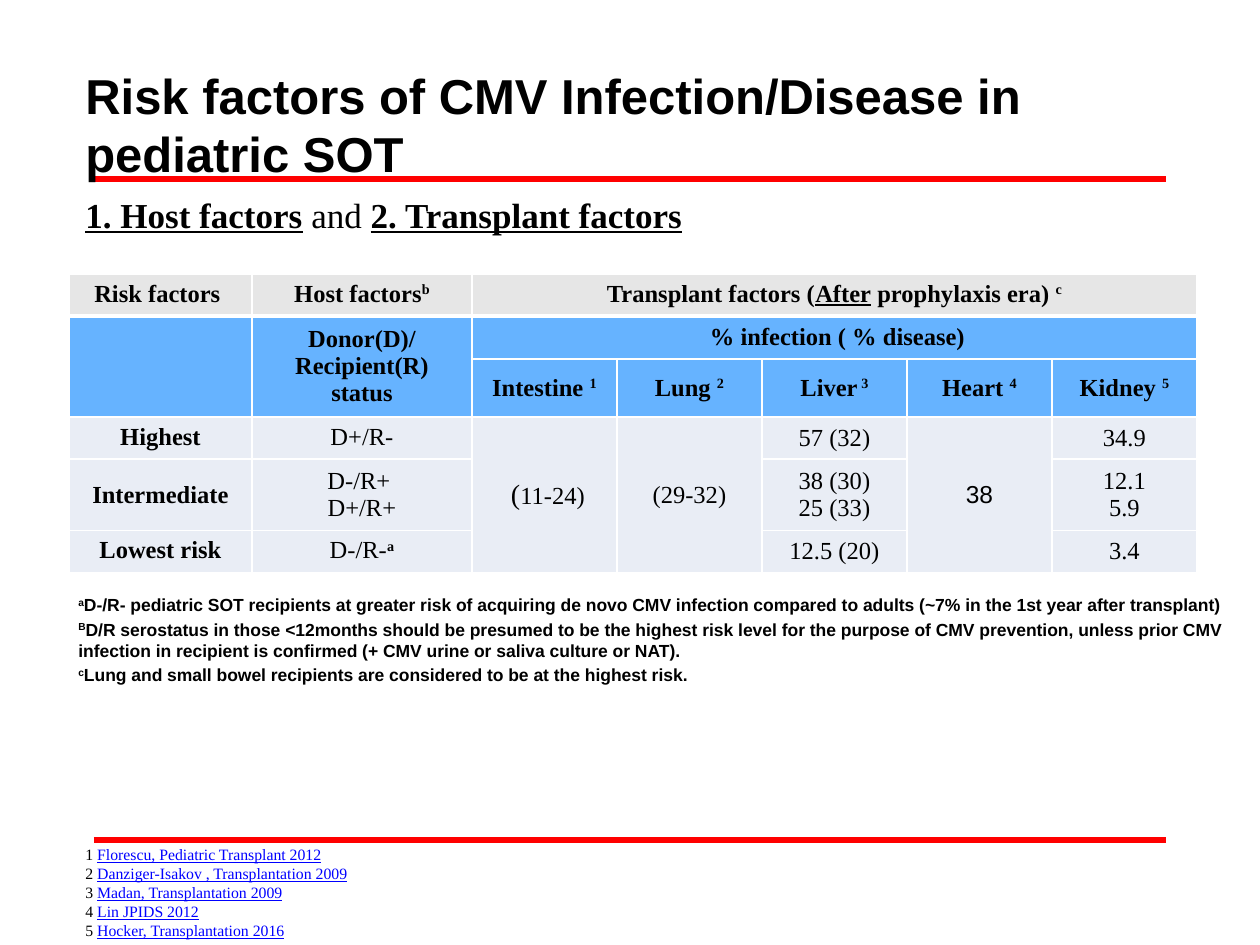
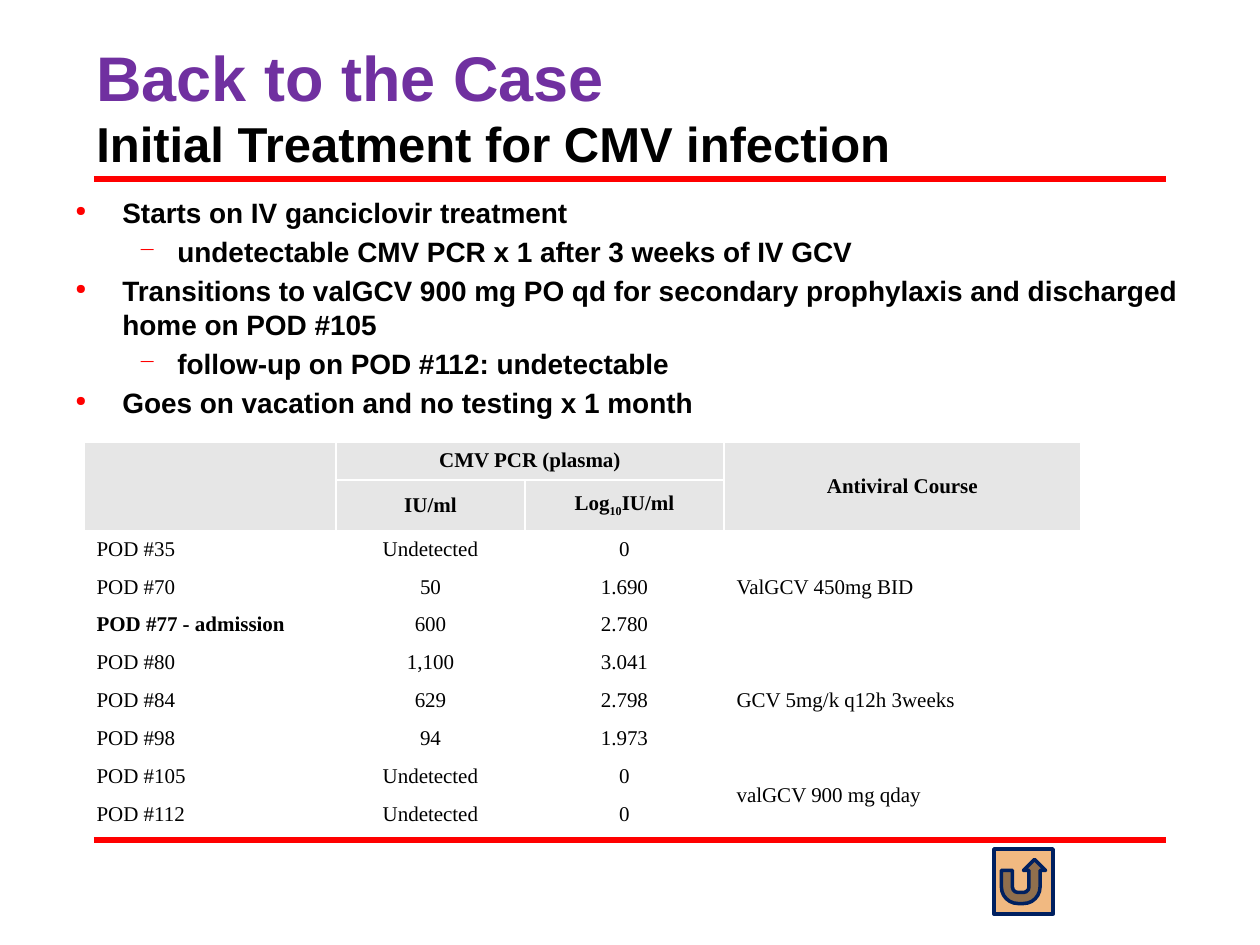
from dataclasses import dataclass

from lxml.etree import SubElement
from pptx import Presentation
from pptx.dml.color import RGBColor
from pptx.enum.shapes import MSO_CONNECTOR, MSO_SHAPE
from pptx.enum.text import MSO_ANCHOR as Anchor, PP_ALIGN as Align
from pptx.oxml.ns import qn
from pptx.util import Emu, Pt


@dataclass(frozen=True)
class Theme:
    sans: str = "Arial"
    serif: str = "Times New Roman"
    black: str = "000000"
    white: str = "FFFFFF"
    red: str = "FF0000"
    purple: str = "7030A0"
    link: str = "0000FF"
    header_grey: str = "E6E6E6"
    header_blue: str = "66B3FF"
    body_blue: str = "E9EDF5"
    button: str = "F1B981"
    navy: str = "002060"
    big_title: int = 36
    title: int = 28
    heading: int = 20
    bullet: int = 16
    risk_table: int = 14
    course_table: int = 12
    footnote: int = 10
    reference: int = 9


theme = Theme()
PX = 914400 / 126
SUPER = {"baseline": 30000}
SUB = {"baseline": -25000}


def write(frame, paragraphs, align=Align.LEFT, anchor=Anchor.TOP, space_before=0, **base):
    """Fill a frame; a paragraph is a string or a list of strings and (string, format) pairs."""
    frame.word_wrap = True
    frame.vertical_anchor = anchor
    for index, runs in enumerate(paragraphs):
        paragraph = frame.paragraphs[0] if index == 0 else frame.add_paragraph()
        paragraph.alignment = align
        paragraph.space_before = Pt(space_before)
        for part in [runs] if isinstance(runs, str) else runs:
            text, changes = (part, {}) if isinstance(part, str) else part
            look = {"font": theme.sans, "color": theme.black, "bold": False} | base | changes
            run = paragraph.add_run()
            run.text = text
            run.font.name = look["font"]
            run.font.size = Pt(look["size"])
            run.font.bold = look["bold"]
            run.font.underline = look.get("underline", False)
            run.font.color.rgb = RGBColor.from_string(look["color"])
            if "baseline" in look:
                run.font._element.set("baseline", str(look["baseline"]))


def build_table(slide, left, top, widths, heights, spans, thick_row=None):
    """Add an unfilled table with white borders; spans maps a cell to its last cell."""
    frame = slide.shapes.add_table(
        len(heights), len(widths), Emu(round(left * PX)), Emu(round(top * PX)),
        Emu(round(sum(widths) * PX)), Emu(round(sum(heights) * PX)))
    table = frame.table
    table.first_row = table.horz_banding = False
    for column, width in zip(table.columns, widths):
        column.width = Emu(round(width * PX))
    for row_index, (row, height) in enumerate(zip(table.rows, heights)):
        row.height = Emu(round(height * PX))
        for cell in row.cells:
            properties = cell._tc.get_or_add_tcPr()
            for side in "LRTB":
                thick = ((side == "B" and row_index == thick_row)
                         or (side == "T" and row_index - 1 == thick_row))
                width = Pt(3 if thick and thick_row is not None else 1)
                border = SubElement(properties, qn(f"a:ln{side}"), w=str(width))
                fill = SubElement(border, qn("a:solidFill"))
                SubElement(fill, qn("a:srgbClr"), val=theme.white)
            cell.fill.background()
    for first, last in spans.items():
        table.cell(*first).merge(table.cell(*last))
    return table


presentation = Presentation()
presentation.slide_width = Emu(round(1260 * PX))
presentation.slide_height = Emu(round(945 * PX))
blank = presentation.slide_layouts[6]
risk_slide, case_slide = (presentation.slides.add_slide(blank) for _ in range(2))

# Red rules shared by both slides
for slide in (risk_slide, case_slide):
    for y in (179, 840):
        rule = slide.shapes.add_connector(
            MSO_CONNECTOR.STRAIGHT, *(Emu(round(v * PX)) for v in (94, y, 1166, y)))
        rule.line.color.rgb = RGBColor.from_string(theme.red)
        rule.line.width = Pt(3)
        SubElement(rule._element.spPr, qn("a:effectLst"))

# Text blocks
title_format = dict(size=theme.title, bold=True, anchor=Anchor.BOTTOM)
underlined = {"bold": True, "underline": True}
references = ["Florescu, Pediatric Transplant 2012", "Danziger-Isakov , Transplantation 2009",
              "Madan, Transplantation 2009", "Lin JPIDS 2012", "Hocker, Transplantation 2016"]
footnotes = [
    ("a", "D-/R- pediatric SOT recipients at greater risk of acquiring de novo CMV infection "
          "compared to adults (~7% in the 1st year after transplant)"),
    ("B", "D/R serostatus in those <12months should be presumed to be the highest risk level "
          "for the purpose of CMV prevention, unless prior CMV infection in recipient is "
          "confirmed (+ CMV urine or saliva culture or NAT)."),
    ("c", "Lung and small bowel recipients are considered to be at the highest risk."),
]
treatment_steps = [
    (0, "Starts on IV ganciclovir treatment"),
    (1, "undetectable CMV PCR x 1 after 3 weeks of IV GCV"),
    (0, "Transitions to valGCV 900 mg PO qd for secondary prophylaxis and discharged "
        "home on POD #105"),
    (1, "follow-up on POD #112: undetectable"),
    (0, "Goes on vacation and no testing x 1 month"),
]
text_blocks = [
    (risk_slide, (73, 32, 1134, 157),
     ["Risk factors of CMV Infection/Disease in pediatric SOT"], title_format),
    (risk_slide, (73, 187, 640, 55),
     [[("1. Host factors", underlined), " and ", ("2. Transplant factors", underlined)]],
     dict(size=theme.heading, font=theme.serif)),
    (risk_slide, (66, 588, 1176, 210),
     [[(mark, SUPER), note] for mark, note in footnotes],
     dict(size=theme.footnote, bold=True, space_before=2)),
    (risk_slide, (73, 839, 336, 108),
     [[f"{number} ", (source, {"color": theme.link, "underline": True})]
      for number, source in enumerate(references, 1)],
     dict(size=theme.reference, font=theme.serif)),
    (case_slide, (84, 21, 1134, 158),
     [[("Back to the Case", {"size": theme.big_title, "color": theme.purple})],
      "Initial Treatment for CMV infection"], title_format),
    (case_slide, (63, 189, 1155, 340), [step for _, step in treatment_steps],
     dict(size=theme.bullet, bold=True, space_before=3.2)),
]
for slide, box, paragraphs, text_format in text_blocks:
    text_box = slide.shapes.add_textbox(*(Emu(round(v * PX)) for v in box))
    write(text_box.text_frame, paragraphs, **text_format)

# Bullets of the treatment steps, in the last text box
bullet_levels = [(47, -47, "●", 50), (102, -39, "─", 80)]
for (level, _), paragraph in zip(treatment_steps, text_box.text_frame.paragraphs):
    margin, indent, symbol, percent = bullet_levels[level]
    paragraph.level = level
    properties = paragraph._p.get_or_add_pPr()
    properties.set("marL", str(round(margin * PX)))
    properties.set("indent", str(round(indent * PX)))
    color = SubElement(properties, qn("a:buClr"))
    SubElement(color, qn("a:srgbClr"), val=theme.red)
    SubElement(properties, qn("a:buSzPct"), val=str(percent * 1000))
    SubElement(properties, qn("a:buChar"), char=symbol)

# Risk factor table
organs = [("Intestine ", "1"), ("Lung ", "2"), ("Liver", " 3"), ("Heart ", "4"), ("Kidney ", "5")]
risk_cells = {
    (0, 0): ["Risk factors "],
    (0, 1): [["Host factors", ("b", SUPER)]],
    (0, 2): [["Transplant factors (", ("After", {"underline": True}), " prophylaxis era) ",
              ("c", SUPER)]],
    (1, 1): ["Donor(D)/", "Recipient(R) status"],
    (1, 2): [" % infection ( % disease)"],
    (3, 0): ["Highest"],
    (3, 1): ["D+/R-"],
    (3, 2): [[(" (", {"size": 16}), "11-24)"]],
    (3, 3): ["(29-32)"],
    (3, 4): ["57 (32)"],
    (3, 5): [[("38", {"font": theme.sans})]],
    (3, 6): ["34.9"],
    (4, 0): ["Intermediate"],
    (4, 1): ["D-/R+ ", "D+/R+"],
    (4, 4): ["38 (30)", "25 (33)"],
    (4, 6): ["12.1", "5.9"],
    (5, 0): ["Lowest risk"],
    (5, 1): [["D-/R-", ("a", SUPER | {"bold": True})]],
    (5, 4): ["12.5 (20)"],
    (5, 6): ["3.4"],
}
for column, (organ, mark) in enumerate(organs, 2):
    risk_cells[2, column] = [[organ, (mark, SUPER)]]
risk_spans = {(0, 2): (0, 6), (1, 0): (2, 0), (1, 1): (2, 1), (1, 2): (1, 6),
              (3, 2): (5, 2), (3, 3): (5, 3), (3, 5): (5, 5)}
risk_table = build_table(risk_slide, 69, 274, [183, 220] + [145] * 5,
                         [42, 43, 51, 42, 69, 42], risk_spans, thick_row=0)
row_fills = [theme.header_grey] + [theme.header_blue] * 2 + [theme.body_blue] * 3
for row, fill in enumerate(row_fills):
    for column in range(7):
        cell = risk_table.cell(row, column)
        cell.fill.solid()
        cell.fill.fore_color.rgb = RGBColor.from_string(fill)
        at_top = row == 0 or (row in (3, 5) and column < 2)
        cell.vertical_anchor = Anchor.TOP if at_top else Anchor.MIDDLE
        write(cell.text_frame, risk_cells.get((row, column), [""]), align=Align.CENTER,
              anchor=None, size=theme.risk_table, font=theme.serif,
              bold=row < 3 or column == 0)

# Antiviral course table
course_rows = [
    ["", "CMV PCR (plasma)", "", "Antiviral Course"],
    ["", "IU/ml", ["Log", ("10", SUB), "IU/ml"], ""],
    ["POD #35", "Undetected", "0", "ValGCV 450mg BID"],
    ["POD #70", "50", "1.690", ""],
    ["POD #77 - admission", "600", "2.780", ""],
    ["POD #80", "1,100", "3.041", "GCV 5mg/k q12h 3weeks"],
    ["POD #84", "629", "2.798", ""],
    ["POD #98", "94", "1.973", ""],
    ["POD #105", "Undetected", "0", "valGCV 900 mg qday"],
    ["POD #112", "Undetected", "0", ""],
]
course_spans = {(0, 0): (1, 0), (0, 1): (0, 2), (0, 3): (1, 3),
                (2, 3): (4, 3), (5, 3): (7, 3), (8, 3): (9, 3)}
course_table = build_table(case_slide, 84, 442, [252, 189, 199, 357],
                           [36, 39] + [36] * 7 + [39], course_spans)
for row, texts in enumerate(course_rows):
    for column, text in enumerate(texts):
        cell = course_table.cell(row, column)
        is_header = row < 2
        if is_header:
            cell.fill.solid()
            cell.fill.fore_color.rgb = RGBColor.from_string(theme.header_grey)
        cell.vertical_anchor = Anchor.MIDDLE
        write(cell.text_frame, [text], anchor=None, size=theme.course_table, font=theme.serif,
              align=Align.CENTER if is_header or column in (1, 2) else Align.LEFT,
              bold=is_header or text == "POD #77 - admission")

# Return button
button = case_slide.shapes.add_shape(
    MSO_SHAPE.ACTION_BUTTON_RETURN, *(Emu(round(v * PX)) for v in (994, 849, 59, 65)))
button.shadow.inherit = False
button.fill.solid()
button.fill.fore_color.rgb = RGBColor.from_string(theme.button)
button.line.color.rgb = RGBColor.from_string(theme.navy)
button.line.width = Pt(2)

presentation.save("out.pptx")
